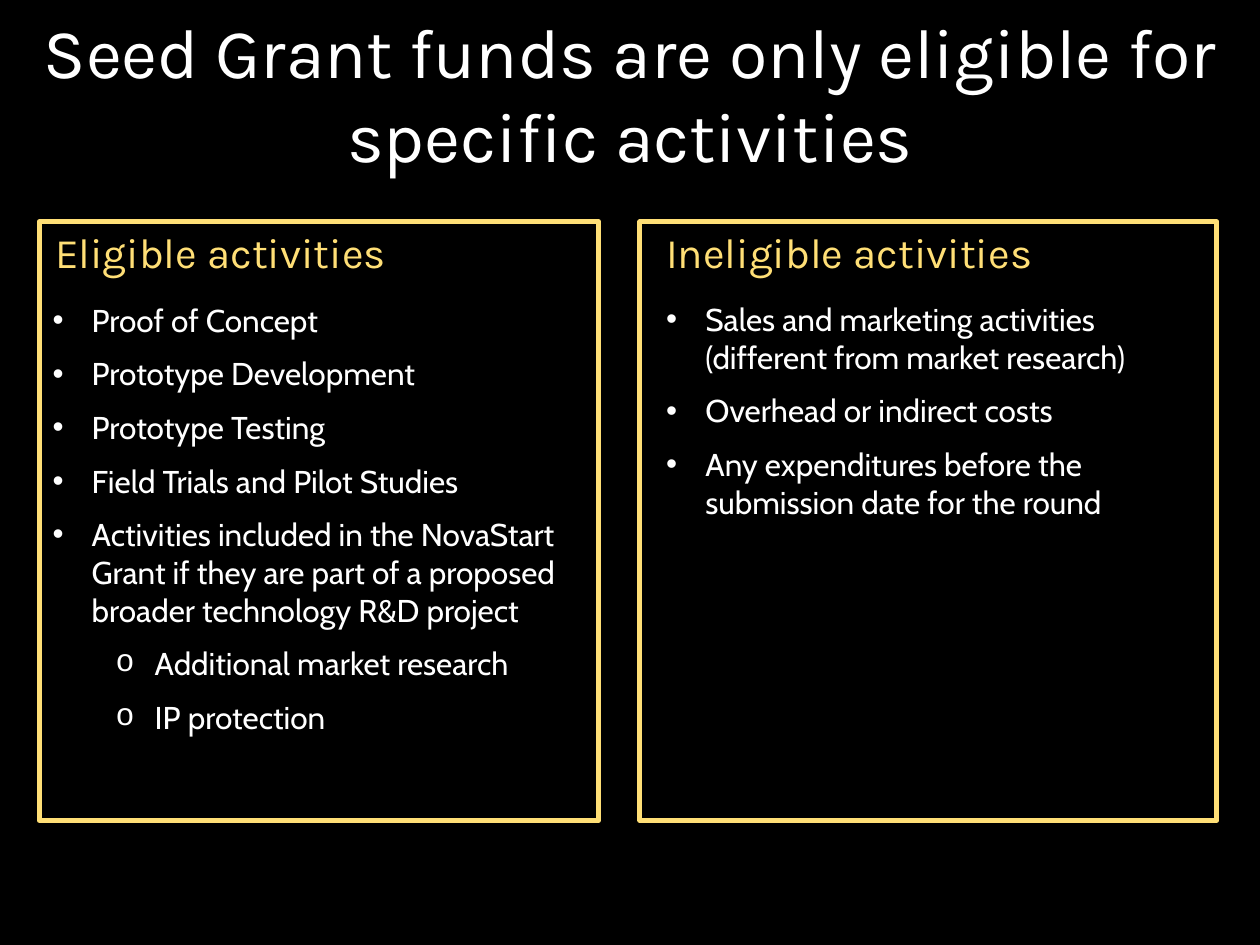
from lxml import etree
from pptx import Presentation
from pptx import util as u
from pptx.dml import color
from pptx.enum import shapes, text
from pptx.oxml import ns

Cm, Pt = u.Cm, u.Pt
BLACK, WHITE, GOLD = "000000", "FFFFFF", "FFDF76"
TITLE = "Seed Grant funds are only eligible for specific activities"

# Boxes are left, top, width, height in cm; each item is level, wording.
PANELS = [
    {
        "head": "Eligible activities",
        "frame": (0.79, 4.47, 11.28, 12.07),
        "headbox": (0.86, 4.45, 11.4, 1.27),
        "listbox": (0.81, 5.94, 11.43, 9.09),
        "items": [
            (0, "Proof of Concept"),
            (0, "Prototype Development"),
            (0, "Prototype Testing"),
            (0, "Field Trials and Pilot Studies"),
            (0, "Activities included in the NovaStart Grant if they are "
                "part of a proposed broader technology R&D project"),
            (1, "Additional market research"),
            (1, "IP protection"),
        ],
    },
    {
        "head": "Ineligible activities",
        "frame": (12.9, 4.47, 11.63, 12.07),
        "headbox": (13.18, 4.45, 11.15, 1.27),
        "listbox": (13.18, 5.92, 11.15, 10.77),
        "items": [
            (0, "Sales and marketing activities "
                "(different from market research)"),
            (0, "Overhead or indirect costs"),
            (0, "Any expenditures before the submission date for the round"),
        ],
    },
]

BIG = {"name": "Karla", "size": Pt(40)}
HEAD = {"name": "Karla", "size": Pt(24)}
BODY = {"name": "Cabin", "size": Pt(18)}
GAPS = {"space_before": Pt(3), "space_after": Pt(6)}
MARKS = [("•", "Arial"), ("o", "Courier New")]  # by level
HANG, STEP = 0.79, 1.27


def rgb(code):
    return color.RGBColor.from_string(code)


def put(obj, form):
    """Set each attribute named in form."""
    for key, val in form.items():
        setattr(obj, key, val)


def write(para, words, form, tint):
    run = para.add_run()
    run.text = words
    put(run.font, form)
    run.font.color.rgb = rgb(tint)


def mark(para, level):
    """Give a paragraph a hanging bullet for its level."""
    para.level = level
    sign, face = MARKS[level]
    props = para._p.get_or_add_pPr()
    props.set("marL", str(Cm(HANG + level * STEP)))
    props.set("indent", str(-Cm(HANG)))
    etree.SubElement(props, ns.qn("a:buFont")).set("typeface", face)
    etree.SubElement(props, ns.qn("a:buChar")).set("char", sign)


def add_box(slide, box):
    frame = slide.shapes.add_textbox(*map(Cm, box)).text_frame
    frame.word_wrap = True
    return frame


def add_list(slide, box, items):
    frame = add_box(slide, box)
    for num, (level, words) in enumerate(items):
        para = frame.add_paragraph() if num else frame.paragraphs[0]
        put(para, GAPS)
        mark(para, level)
        write(para, words, BODY, WHITE)


def add_frame(slide, box):
    rect = slide.shapes.add_shape(shapes.MSO_SHAPE.RECTANGLE, *map(Cm, box))
    rect.shadow.inherit = False
    rect.fill.background()
    rect.line.color.rgb = rgb(GOLD)
    rect.line.width = Pt(2.75)


def main():
    deck = Presentation()
    put(deck, {"slide_width": Cm(25.4), "slide_height": Cm(19.05)})
    slide = deck.slides.add_slide(deck.slide_layouts[6])
    slide.background.fill.solid()
    slide.background.fill.fore_color.rgb = rgb(BLACK)

    title = add_box(slide, (0, 0.05, 25.4, 3.18)).paragraphs[0]
    title.alignment = text.PP_ALIGN.CENTER
    write(title, TITLE, BIG, WHITE)

    for panel in PANELS:
        add_list(slide, panel["listbox"], panel["items"])
        head = add_box(slide, panel["headbox"]).paragraphs[0]
        write(head, panel["head"], HEAD, GOLD)
        add_frame(slide, panel["frame"])
    deck.save("out.pptx")


if __name__ == "__main__":
    main()
